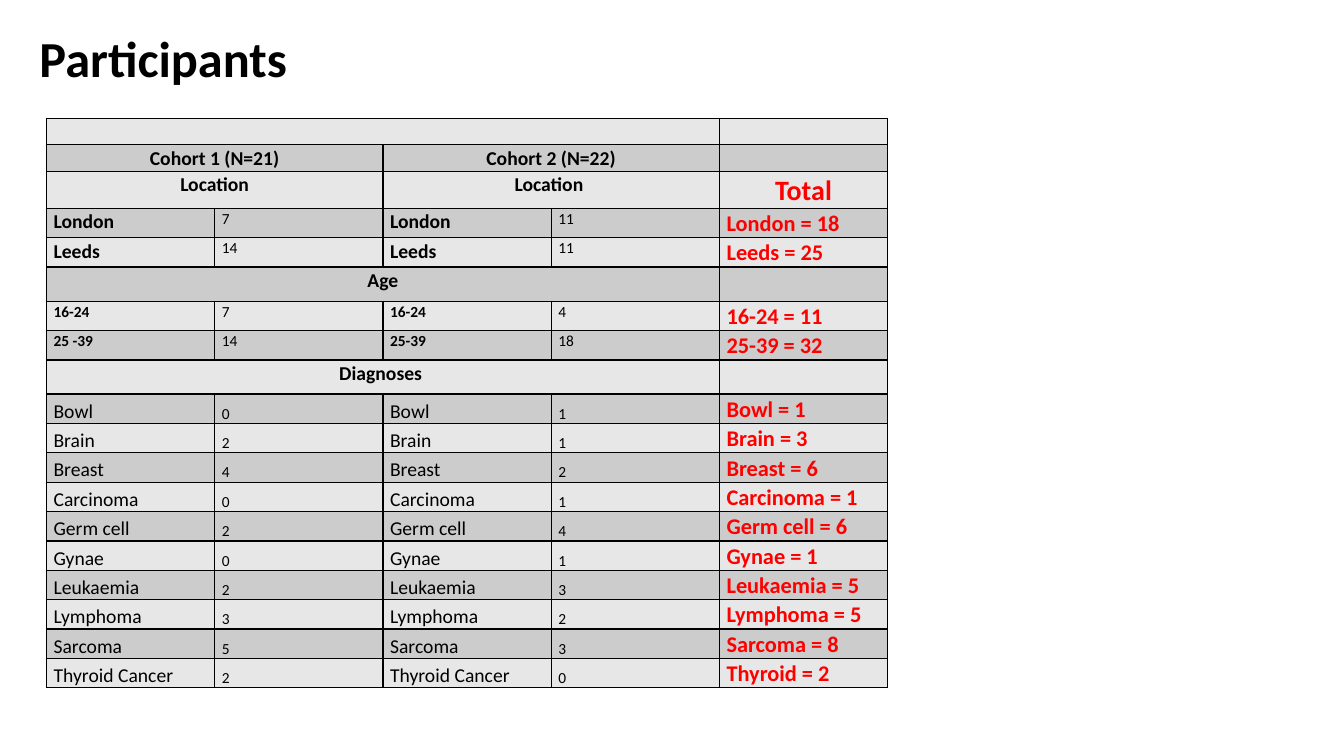
from lxml.etree import SubElement
from pptx import Presentation
from pptx.dml.color import RGBColor
from pptx.enum.text import MSO_ANCHOR as Anchor, PP_ALIGN as Align
from pptx.oxml.ns import qn
from pptx.util import Cm, Pt

COLORS = {"text": "000000", "total": "FF0000", "line": "000000",
          "light": "E7E7E7", "dark": "CCCCCC"}
FONT = "Calibri"
COLUMNS = 5
ROW_HEIGHTS = {"blank": 0.67, "cohorts": 0.67, "locations": 0.93,
               "section": 0.86, "count": 0.74}

HEADING = {"size": Pt(14), "bold": True}
AGE_LABEL = {"size": Pt(11), "bold": True}
DIAGNOSIS_LABEL = {"size": Pt(14), "bold": False}
COUNT = {"size": Pt(11), "bold": False}
TOTAL = {"size": Pt(16), "bold": True}
TOTAL_HEADING = {"size": Pt(20), "bold": True}

LOCATIONS = [("London", 7, 11), ("Leeds", 14, 11)]
AGES = [("16-24", 7, 4), ("25-39", 14, 18)]
DIAGNOSES = [("Bowl", 0, 1), ("Brain", 2, 1), ("Breast", 4, 2),
             ("Carcinoma", 0, 1), ("Germ cell", 2, 4), ("Gynae", 0, 1),
             ("Leukaemia", 2, 3), ("Lymphoma", 3, 2), ("Sarcoma", 5, 3),
             ("Thyroid Cancer", 2, 0)]
FIRST_COHORT_LABELS = {"25-39": "25 -39"}
TOTAL_LABELS = {"Thyroid Cancer": "Thyroid"}


def count_rows(groups, label_format, anchor=Anchor.TOP):
    """Return rows of (kind, cells); a cell is (column, span, text, format, color, align, anchor)."""
    rows = []
    for label, first, second in groups:
        total = f"{TOTAL_LABELS.get(label, label)} = {first + second}"
        values = [(FIRST_COHORT_LABELS.get(label, label), label_format, "text"),
                  (str(first), COUNT, "text"),
                  (label, label_format, "text"),
                  (str(second), COUNT, "text"),
                  (total, TOTAL, "total")]
        rows.append(("count", [(column, 1, *value, Align.LEFT, anchor)
                               for column, value in enumerate(values)]))
    return rows


def heading(column, span, text, text_format=HEADING, color="text"):
    return column, span, text, text_format, color, Align.CENTER, Anchor.TOP


def participant_rows():
    return [
        ("blank", [heading(0, 4, "")]),
        ("cohorts", [heading(0, 2, "Cohort 1 (N=21)"), heading(2, 2, "Cohort 2 (N=22)")]),
        ("locations", [heading(0, 2, "Location"), heading(2, 2, "Location "),
                       heading(4, 1, "Total", TOTAL_HEADING, "total")]),
        *count_rows(LOCATIONS, HEADING),
        ("section", [heading(0, 4, "Age")]),
        *count_rows(AGES, AGE_LABEL),
        ("section", [heading(0, 4, "Diagnoses ")]),
        *count_rows(DIAGNOSES, DIAGNOSIS_LABEL, Anchor.BOTTOM),
    ]


def add_borders(cell):
    properties = cell._tc.get_or_add_tcPr()
    for position, side in enumerate(("lnL", "lnR", "lnT", "lnB")):
        line = SubElement(properties, qn(f"a:{side}"), w=str(Pt(1)))
        fill = SubElement(line, qn("a:solidFill"))
        SubElement(fill, qn("a:srgbClr"), val=COLORS["line"])
        properties.insert(position, line)


def prepare_cell(cell, fill):
    """Give an empty cell its fill, borders, insets and small line height."""
    cell.fill.solid()
    cell.fill.fore_color.rgb = RGBColor.from_string(COLORS[fill])
    insets = {"margin_left": Cm(0.18), "margin_right": Cm(0.18),
              "margin_top": 0, "margin_bottom": 0}
    for name, value in insets.items():
        setattr(cell, name, value)
    add_borders(cell)
    SubElement(cell.text_frame.paragraphs[0]._p, qn("a:endParaRPr"), sz="1200")


def format_run(run, text_format, color):
    for name, value in {"name": FONT, **text_format}.items():
        setattr(run.font, name, value)
    run.font.color.rgb = RGBColor.from_string(COLORS[color])


def write_cell(cell, text, text_format, color, align, anchor):
    cell.vertical_anchor = anchor
    paragraph = cell.text_frame.paragraphs[0]
    paragraph.alignment = align
    paragraph.line_spacing = 1.07
    if text:
        run = paragraph.add_run()
        run.text = text
        format_run(run, text_format, color)


def add_title(slide, left, top, width, height):
    title = slide.shapes.title
    box = {"left": left, "top": top, "width": width, "height": height}
    for name, value in box.items():
        setattr(title, name, value)
    title.text_frame.vertical_anchor = Anchor.MIDDLE
    paragraph = title.text_frame.paragraphs[0]
    paragraph.alignment = Align.LEFT
    paragraph.line_spacing = 0.9
    run = paragraph.add_run()
    run.text = "Participants"
    format_run(run, {"size": Pt(36), "bold": True}, "text")


def add_participants_table(slide, left, top, width):
    rows = participant_rows()
    heights = [Cm(ROW_HEIGHTS[kind]) for kind, _ in rows]
    frame = slide.shapes.add_table(len(rows), COLUMNS, left, top, width, sum(heights))
    table = frame.table
    table.first_row = table.horz_banding = False
    for index, (_, cells) in enumerate(rows):
        table.rows[index].height = heights[index]
        for cell in table.rows[index].cells:
            prepare_cell(cell, "dark" if index % 2 else "light")
        for column, span, *content in cells:
            cell = table.cell(index, column)
            if span > 1:
                cell.merge(table.cell(index, column + span - 1))
            write_cell(cell, *content)


def main():
    presentation = Presentation()
    presentation.slide_width, presentation.slide_height = Cm(33.87), Cm(19.05)
    slide = presentation.slides.add_slide(presentation.slide_layouts[5])
    add_title(slide, Cm(0.74), Cm(0.08), Cm(19.81), Cm(2.9))
    add_participants_table(slide, Cm(1.17), Cm(2.98), Cm(21.2))
    presentation.save("out.pptx")


if __name__ == "__main__":
    main()
